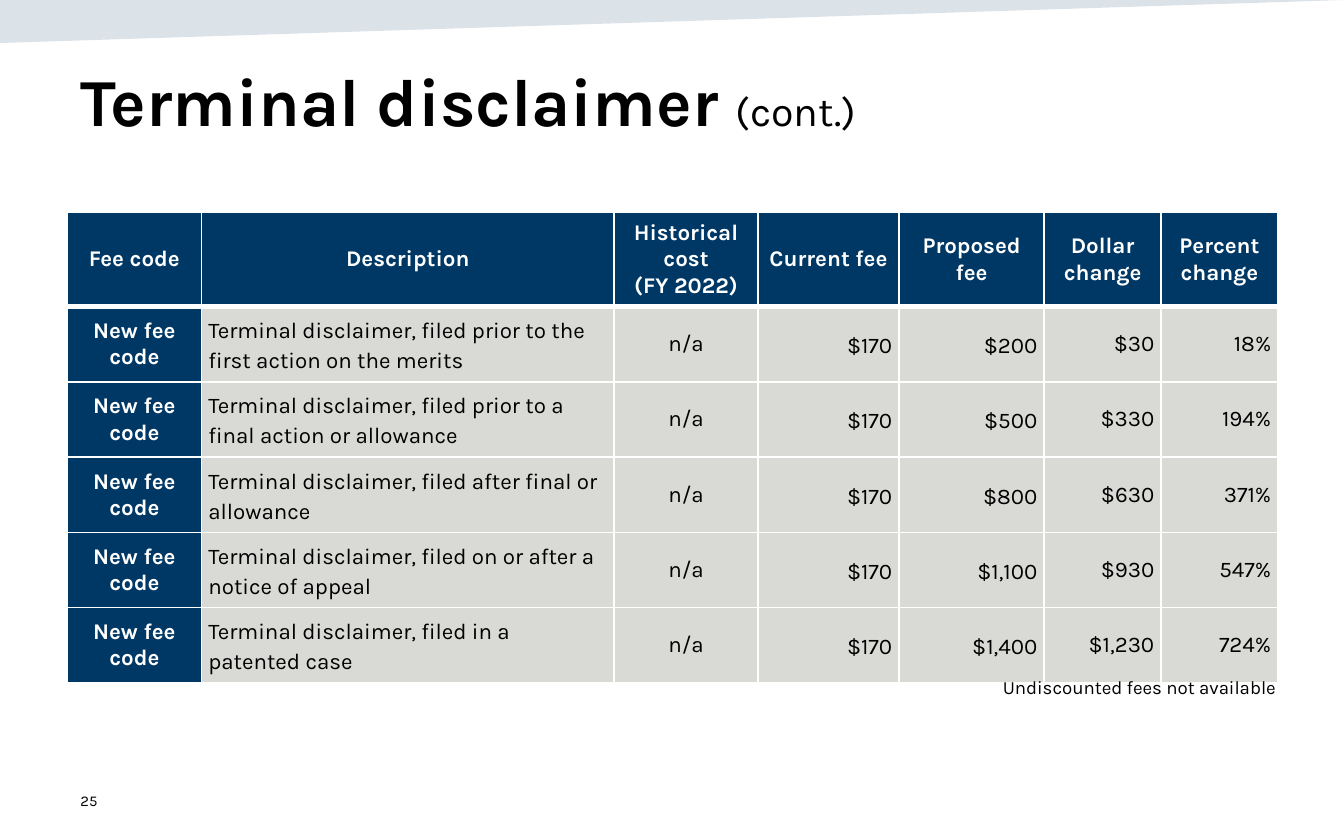
import pptx
import pptx.util
import pptx.dml.color
import pptx.enum.text
import pptx.oxml
import pptx.oxml.ns
import lxml.etree

PX = 9144
FONT = "Karla"
COLORS = {"band": "164469", "navy": "003865", "grey": "D9D9D6",
          "white": "FFFFFF", "black": "000000"}
LEFT, CENTER, RIGHT = (pptx.enum.text.PP_ALIGN.LEFT, pptx.enum.text.PP_ALIGN.CENTER,
                       pptx.enum.text.PP_ALIGN.RIGHT)
MIDDLE = pptx.enum.text.MSO_ANCHOR.MIDDLE

HEADERS = ["Fee code", "Description", "Historical cost\n(FY 2022)", "Current fee",
           "Proposed fee", "Dollar change", "Percent change"]
FEES = [
    ("filed prior to the first action on the merits", "$200", "$30", "18%"),
    ("filed prior to a final action or allowance", "$500", "$330", "194%"),
    ("filed after final or allowance", "$800", "$630", "371%"),
    ("filed on or after a notice of appeal", "$1,100", "$930", "547%"),
    ("filed in a patented case", "$1,400", "$1,230", "724%"),
]
COLUMN_WIDTHS = [100, 307, 107, 105, 108, 87, 87]
HEADER_HEIGHT, ROW_HEIGHT = 67, 54
ALIGNS = [CENTER, LEFT, CENTER, RIGHT, RIGHT, RIGHT, RIGHT]
LOOSE_COLUMNS = (1, 3, 4)


def px(n):
    return pptx.util.Emu(n * PX)


def rgb(name):
    return pptx.dml.color.RGBColor.from_string(COLORS[name])


def add_run(p, text, size, color="black", bold=False):
    r = p.add_run()
    r.text = text
    r.font.name = FONT
    r.font.size = pptx.util.Pt(size)
    r.font.bold = bold
    r.font.color.rgb = rgb(color)


def add_box(s, box):
    tf = s.shapes.add_textbox(*map(px, box)).text_frame
    tf.word_wrap = True
    return tf


def add_band(s, box):
    x, y, w, h = box
    builder = s.shapes.build_freeform(x, y, scale=PX)
    builder.add_line_segments([(x, y + h), (x + w, y)], close=True)
    sp = builder.convert_to_shape()
    sp.shadow.inherit = False
    sp.line.fill.background()
    sp.fill.solid()
    sp.fill.fore_color.rgb = rgb("band")
    color = sp.fill._xPr.find(".//" + pptx.oxml.ns.qn("a:srgbClr"))
    lxml.etree.SubElement(color, pptx.oxml.ns.qn("a:alpha"), val="15000")


def add_title(s, box):
    tf = add_box(s, box)
    tf.margin_top = px(10)
    p = tf.paragraphs[0]
    add_run(p, "Terminal disclaimer ", 36, bold=True)
    add_run(p, "(cont.)", 22)


def add_page_number(s, box):
    tf = add_box(s, box)
    tf.vertical_anchor = MIDDLE
    add_run(tf.paragraphs[0], "25", 8)


def add_footnote(s, box):
    p = add_box(s, box).paragraphs[0]
    p.alignment = RIGHT
    add_run(p, "Undiscounted fees not available", 10)


def set_borders(cell, top, bottom):
    tcPr = cell._tc.get_or_add_tcPr()
    for side, width in (("L", 1), ("R", 1), ("T", top), ("B", bottom)):
        tcPr.append(pptx.oxml.parse_xml(
            f'<a:ln{side} {pptx.oxml.ns.nsdecls("a")} w="{pptx.util.Pt(width)}">'
            f'<a:solidFill><a:srgbClr val="{COLORS["white"]}"/></a:solidFill></a:ln{side}>'))


def fill_cell(cell, text, row, col):
    header = row == 0
    strong = header or col == 0
    set_borders(cell, 3 if row == 1 else 1, 3 if header else 1)
    cell.fill.solid()
    cell.fill.fore_color.rgb = rgb("navy" if strong else "grey")
    cell.vertical_anchor = MIDDLE
    cell.margin_left = cell.margin_right = cell.margin_top = cell.margin_bottom = px(5)
    tf = cell.text_frame
    for i, line in enumerate(text.split("\n")):
        p = tf.add_paragraph() if i else tf.paragraphs[0]
        p.alignment = CENTER if header else ALIGNS[col]
        if not header and col in LOOSE_COLUMNS:
            p.line_spacing = 1.15
            p.space_after = pptx.util.Pt(3)
        elif not header:
            p.space_after = pptx.util.Pt(6)
        add_run(p, line, 12, "white" if strong else "black", strong)


def add_fee_table(s, box):
    rows = [HEADERS] + [["New fee code", f"Terminal disclaimer, {stage}", "n/a", "$170", *values]
                        for stage, *values in FEES]
    table = s.shapes.add_table(len(rows), len(HEADERS), *map(px, box)).table
    table.horz_banding = False
    for column, width in zip(table.columns, COLUMN_WIDTHS):
        column.width = px(width)
    for r, texts in enumerate(rows):
        table.rows[r].height = px(ROW_HEIGHT if r else HEADER_HEIGHT)
        for c, text in enumerate(texts):
            fill_cell(table.cell(r, c), text, r, c)


def main():
    prs = pptx.Presentation()
    prs.slide_width, prs.slide_height = px(1000), px(625)
    s = prs.slides.add_slide(prs.slide_layouts[6])
    add_band(s, (0, 0, 1000, 32))
    add_page_number(s, (50, 579, 225, 33))
    add_title(s, (50, 34, 900, 104))
    add_fee_table(s, (50, 158, sum(COLUMN_WIDTHS), HEADER_HEIGHT + ROW_HEIGHT * len(FEES)))
    add_footnote(s, (689, 498, 270, 27))
    prs.save("out.pptx")


if __name__ == "__main__":
    main()
